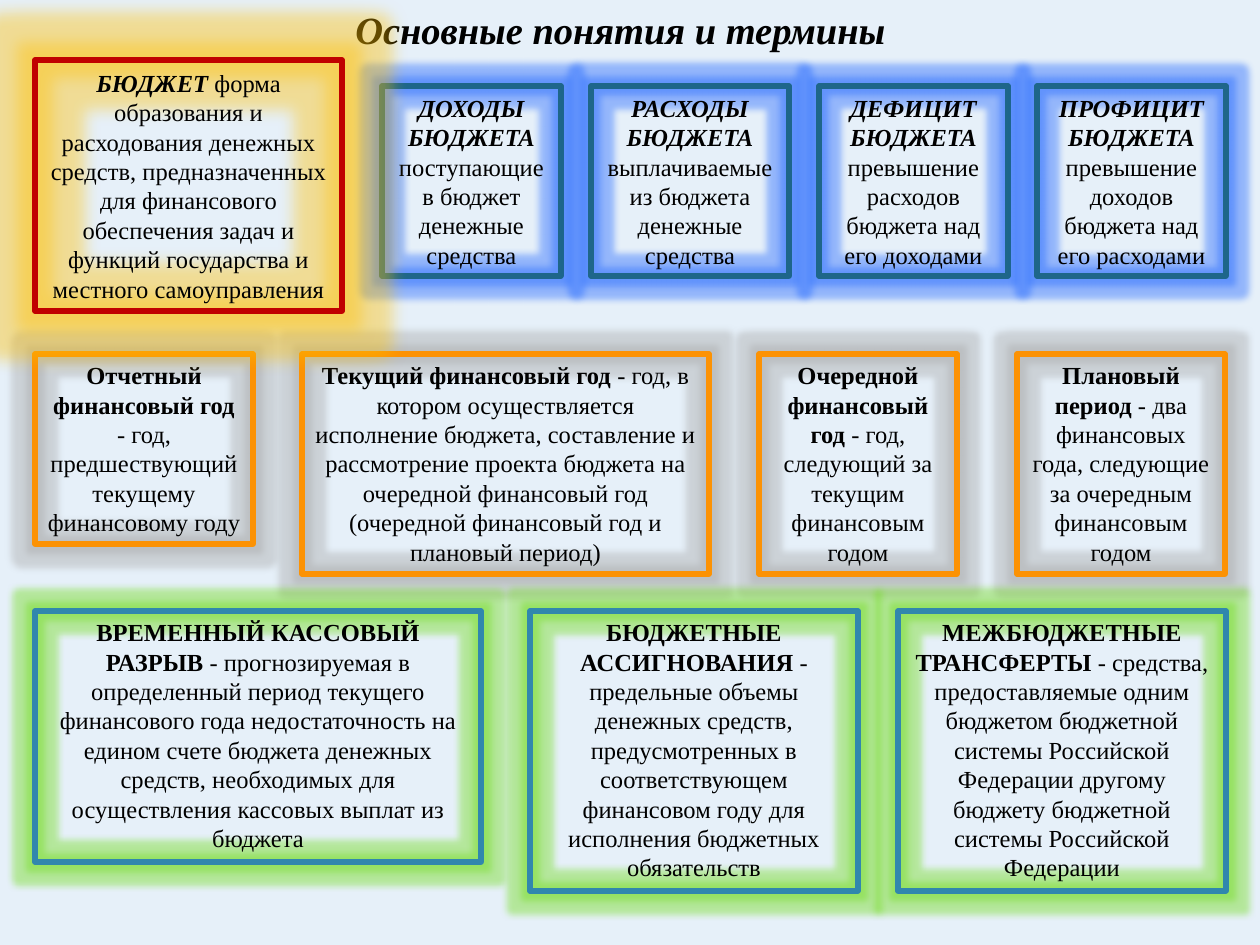
from lxml import etree
from pptx import Presentation
from pptx import util as u
from pptx.dml.color import RGBColor
from pptx.enum import shapes, text
from pptx.oxml.ns import qn

PX = 914400 / 126
FONT = "Times New Roman"


def px(value):
    return u.Emu(round(value * PX))


def color(value):
    return RGBColor.from_string(value)


presentation = Presentation()
presentation.slide_width, presentation.slide_height = px(1260), px(945)
slide = presentation.slides.add_slide(presentation.slide_layouts[6])
slide.background.fill.solid()
slide.background.fill.fore_color.rgb = color("E6F0F9")

# Title
title = slide.shapes.add_textbox(px(343), 0, px(576), px(59))
title.text_frame.word_wrap = False
paragraph = title.text_frame.paragraphs[0]
paragraph.text = "Основные понятия и термины"
font = paragraph.font
font.name, font.size, font.bold, font.italic = FONT, u.Pt(22), True, True
font.color.rgb = color("000000")

# Groups: top, line colour, glow colour, glow radius in points, italic term, anchor,
# then cards: left, width, height, term, definition
MIDDLE, TOP = text.MSO_ANCHOR.MIDDLE, text.MSO_ANCHOR.TOP
groups = [
    (86, "1E668A", "1961FF", 8, True, MIDDLE, [
        (382, 179, 190, "ДОХОДЫ БЮДЖЕТА ", "поступающие в бюджет денежные средства"),
        (591, 198, 190, "РАСХОДЫ БЮДЖЕТА ", "выплачиваемые из бюджета денежные средства"),
        (819, 189, 190, "ДЕФИЦИТ БЮДЖЕТА ", "превышение расходов бюджета над его доходами"),
        (1037, 189, 190, "ПРОФИЦИТ БЮДЖЕТА ", "превышение доходов бюджета над его расходами"),
    ]),
    (354, "FC9204", "A5A5A5", 8, False, TOP, [
        (35, 218, 190, "Отчетный финансовый год",
         " - год, предшествующий текущему финансовому году"),
        (302, 407, 220, "Текущий финансовый год",
         " - год, в котором осуществляется исполнение бюджета, составление и рассмотрение "
         "проекта бюджета на очередной финансовый год (очередной финансовый год и "
         "плановый период)"),
        (759, 198, 220, "Очередной финансовый год",
         " - год, следующий за текущим финансовым годом"),
        (1017, 208, 220, "Плановый период",
         " - два финансовых года, следующие за очередным финансовым годом"),
    ]),
    (611, "3187AD", "6BDB10", 8, False, TOP, [
        (35, 446, 251, "ВРЕМЕННЫЙ КАССОВЫЙ РАЗРЫВ",
         " - прогнозируемая в определенный период текущего финансового года "
         "недостаточность на едином счете бюджета денежных средств, необходимых для "
         "осуществления кассовых выплат из бюджета"),
        (530, 328, 280, "БЮДЖЕТНЫЕ АССИГНОВАНИЯ",
         " - предельные объемы денежных средств, предусмотренных в соответствующем "
         "финансовом году для исполнения бюджетных обязательств"),
        (898, 328, 280, "МЕЖБЮДЖЕТНЫЕ ТРАНСФЕРТЫ",
         " - средства, предоставляемые одним бюджетом бюджетной системы Российской "
         "Федерации другому бюджету бюджетной системы Российской Федерации"),
    ]),
    (60, "C00000", "FFC000", 18, True, MIDDLE, [
        (35, 307, 251, "БЮДЖЕТ ",
         "форма образования и расходования денежных средств, предназначенных для "
         "финансового обеспечения задач и функций государства и местного самоуправления"),
    ]),
]

# Cards
for top, line, glow_color, radius, italic, anchor, cards in groups:
    for left, width, height, term, definition in cards:
        card = slide.shapes.add_shape(
            shapes.MSO_SHAPE.RECTANGLE, px(left), px(top), px(width), px(height))
        card.fill.background()
        card.line.color.rgb = color(line)
        card.line.width = u.Pt(3)

        # Soft glow around the outline
        card.shadow.inherit = False
        effects = card._element.spPr.find(qn("a:effectLst"))
        glow = etree.SubElement(effects, qn("a:glow"), rad=str(u.Pt(radius)))
        tint = etree.SubElement(glow, qn("a:srgbClr"), val=glow_color)
        etree.SubElement(tint, qn("a:alpha"), val="40000")

        # Term and definition
        frame = card.text_frame
        frame.word_wrap = True
        frame.auto_size = text.MSO_AUTO_SIZE.SHAPE_TO_FIT_TEXT
        frame.vertical_anchor = anchor
        paragraph = frame.paragraphs[0]
        paragraph.alignment = text.PP_ALIGN.CENTER
        paragraph.font.name, paragraph.font.size = FONT, u.Pt(14)
        paragraph.font.color.rgb = color("000000")
        run = paragraph.add_run()
        run.text = term
        run.font.bold, run.font.italic = True, italic
        paragraph.add_run().text = definition

presentation.save("out.pptx")
